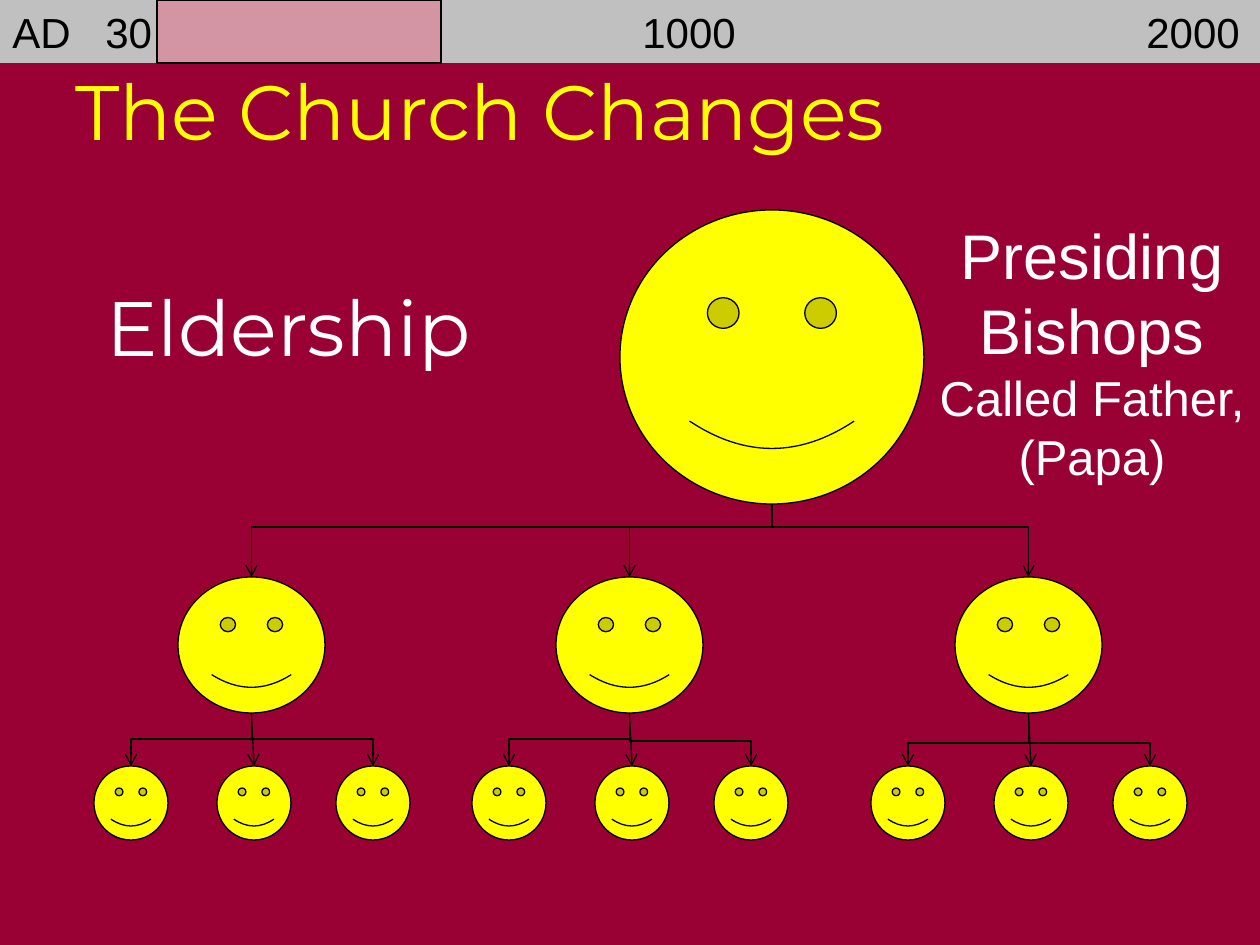
from lxml import etree
from pptx import Presentation
from pptx.dml.color import RGBColor
from pptx.enum.shapes import MSO_CONNECTOR, MSO_SHAPE
from pptx.enum.text import MSO_ANCHOR, PP_ALIGN
from pptx.oxml.ns import qn
from pptx.util import Pt

RECT, SMILEY = MSO_SHAPE.RECTANGLE, MSO_SHAPE.SMILEY_FACE
STRAIGHT, ELBOW = MSO_CONNECTOR.STRAIGHT, MSO_CONNECTOR.ELBOW
TOP, MIDDLE = MSO_ANCHOR.TOP, MSO_ANCHOR.MIDDLE
LEFT, CENTER = PP_ALIGN.LEFT, PP_ALIGN.CENTER

WINE = RGBColor(0x99, 0x00, 0x33)
YELLOW = RGBColor(0xFF, 0xFF, 0x00)
WHITE = RGBColor(0xFF, 0xFF, 0xFF)
BLACK = RGBColor(0x00, 0x00, 0x00)
GRAY = RGBColor(0xC0, 0xC0, 0xC0)
PINK = RGBColor(0xFF, 0x33, 0x66)

LEAF = 74
LEAF_XS = (-84, 39, 158)
TEAM_W, TEAM_H, LEAF_Y = 147, 136, 189


def px(n):
    return round(n * 914400 / 126)


def add(parent, tag, **attrs):
    return etree.SubElement(parent, qn(tag), attrs)


def style(run, size, font, color, shadow=True):
    run.font.size = Pt(size)
    run.font.name = font
    run.font.color.rgb = color
    if shadow:
        fill = run.font._element.find(qn("a:solidFill"))
        glow = etree.Element(qn("a:effectLst"))
        fill.addnext(glow)
        cast = add(glow, "a:outerShdw", dist="25400", dir="2700000", algn="tl")
        add(cast, "a:srgbClr", val=str(BLACK))


def label(slide, box, parts, font, color, align=LEFT, anchor=TOP, before=0):
    """Add one shadowed paragraph; parts are (text, size) pairs."""
    frame = slide.shapes.add_textbox(*map(px, box)).text_frame
    frame.word_wrap = True
    frame.vertical_anchor = anchor
    para = frame.paragraphs[0]
    para.alignment = align
    para.space_before = Pt(before)
    for text, size in parts:
        run = para.add_run()
        run.text = text
        style(run, size, font, color)


def block(slide, kind, box, color, width=None):
    shape = slide.shapes.add_shape(kind, *map(px, box))
    shape.shadow.inherit = False
    shape.fill.solid()
    shape.fill.fore_color.rgb = color
    if width is None:
        shape.line.fill.background()
    else:
        shape.line.color.rgb = BLACK
        shape.line.width = Pt(width)
    return shape


def face(slide, x, y, w, h):
    block(slide, SMILEY, (x, y, w, h), YELLOW, 0.75)


def arrow(slide, kind, x1, y1, x2, y2):
    link = slide.shapes.add_connector(kind, *map(px, (x1, y1, x2, y2)))
    link.line.color.rgb = BLACK
    link.line.width = Pt(0.75)
    add(link.line._get_or_add_ln(), "a:tailEnd", type="arrow")
    add(link._element.spPr, "a:effectLst")
    return link


def branch(slide, x1, y1, x2, y2, bend):
    """Draw an arrow that drops by bend, runs sideways, then drops to its end."""
    drop, run = y2 - y1, abs(x2 - x1)
    mid_x, mid_y = (x1 + x2) / 2, (y1 + y2) / 2
    side = drop / 2 if x2 > x1 else -drop / 2
    link = arrow(slide, ELBOW, mid_x + side, mid_y - run / 2,
                 mid_x - side, mid_y + run / 2)
    props = link._element.spPr
    turn = 270 if x2 > x1 else 90
    props.find(qn("a:xfrm")).set("rot", str(turn * 60000))
    guides = props.find(qn("a:prstGeom")).find(qn("a:avLst"))
    add(guides, "a:gd", name="adj1", fmla=f"val {round(bend / drop * 100000)}")


def team(slide, x, y, bends):
    """Place one elder with three members; bends are the left and right drops."""
    mid, foot = x + TEAM_W / 2, y + TEAM_H
    face(slide, x, y, TEAM_W, TEAM_H)
    ends = [x + dx + LEAF / 2 for dx in LEAF_XS]
    for dx in LEAF_XS:
        face(slide, x + dx, y + LEAF_Y, LEAF, LEAF)
    arrow(slide, STRAIGHT, mid, foot, ends[1], y + LEAF_Y)
    for end, bend in zip(ends[::2], bends):
        branch(slide, mid, foot, end, y + LEAF_Y, bend)


def chart(slide, x, y, w, h):
    """Place the bishop above the three teams."""
    tier = y + 367
    teams = ((178, (26, 26)), (556, (26, 28)), (955, (30, 30)))
    for left, bends in teams:
        team(slide, left, tier, bends)
    face(slide, x, y, w, h)
    for left, _ in teams:
        branch(slide, x + w / 2, y + h, left + TEAM_W / 2, tier, 23)


def timeline(slide, x, y, w, h):
    bar = block(slide, RECT, (x, y, w, h), GRAY)
    frame = bar.text_frame
    frame.vertical_anchor = TOP
    para = frame.paragraphs[0]
    para.text = "AD\t30\t1000\t2000"
    para.alignment = LEFT
    style(para.runs[0], 24, "Arial", BLACK, shadow=False)
    tabs = add(para._p.get_or_add_pPr(), "a:tabLst")
    for stop in (93, 630, 1134):
        add(tabs, "a:tab", pos=str(px(stop)), algn="l")
    span = block(slide, RECT, (x + 157, y, 284, h), PINK, 0)
    tint = span.fill._xPr.find(qn("a:solidFill"))[0]
    add(tint, "a:alpha", val="30000")


def main():
    deck = Presentation()
    deck.slide_width, deck.slide_height = px(1260), px(945)
    slide = deck.slides.add_slide(deck.slide_layouts[6])
    slide.background.fill.solid()
    slide.background.fill.fore_color.rgb = WINE
    label(slide, (94, 273, 514, 116), [("Eldership", 44)],
          "Montserrat", WHITE, before=11)
    label(slide, (924, 210, 336, 263),
          [("Presiding Bishops ", 36), ("Called Father, (Papa)", 28)],
          "Arial", WHITE, CENTER, before=17.5)
    chart(slide, 620, 210, 304, 294)
    label(slide, (63, 57, 1071, 106), [("The Church Changes", 44)],
          "Montserrat", YELLOW, anchor=MIDDLE)
    timeline(slide, 0, 0, 1260, 63)
    deck.save("out.pptx")


if __name__ == "__main__":
    main()
